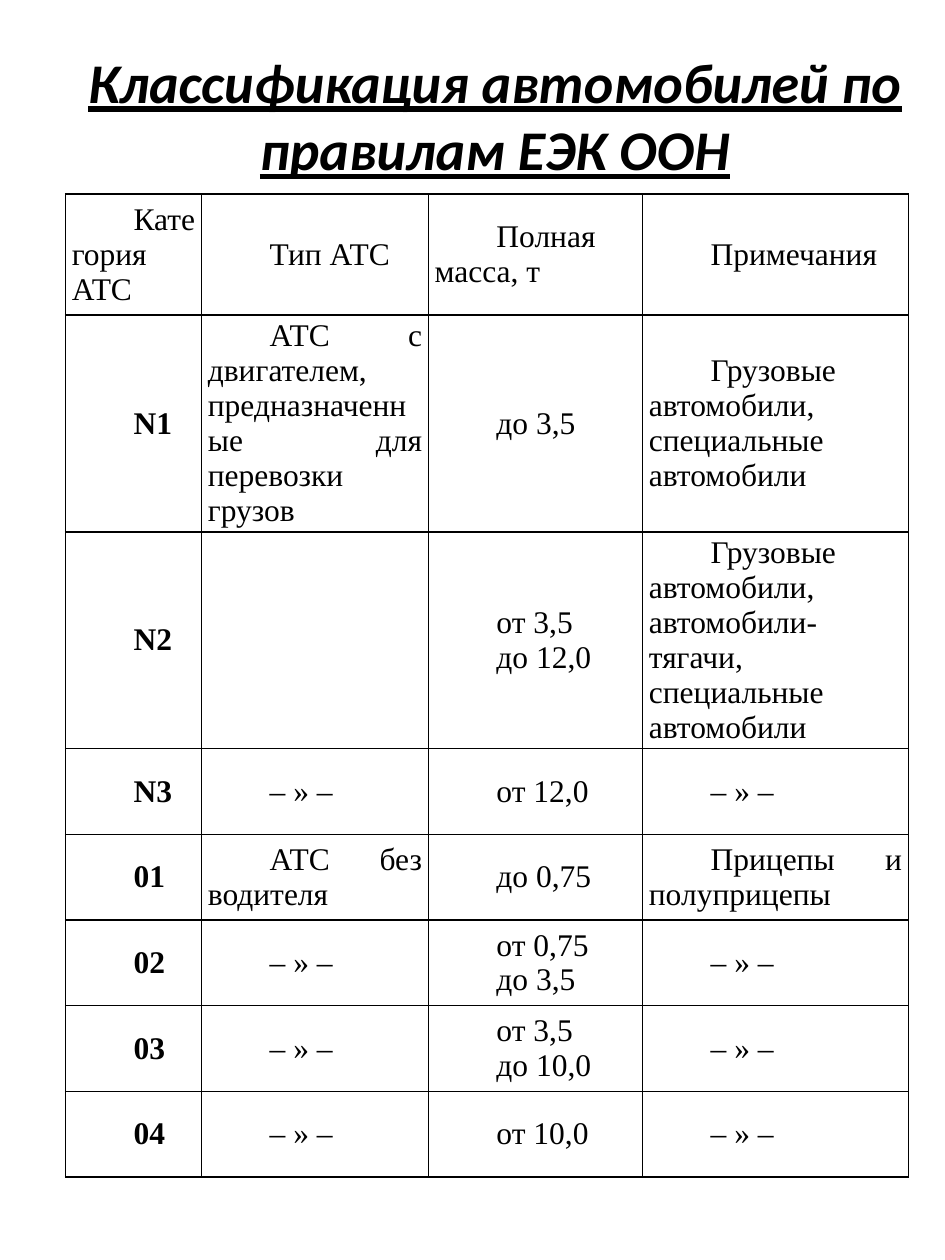
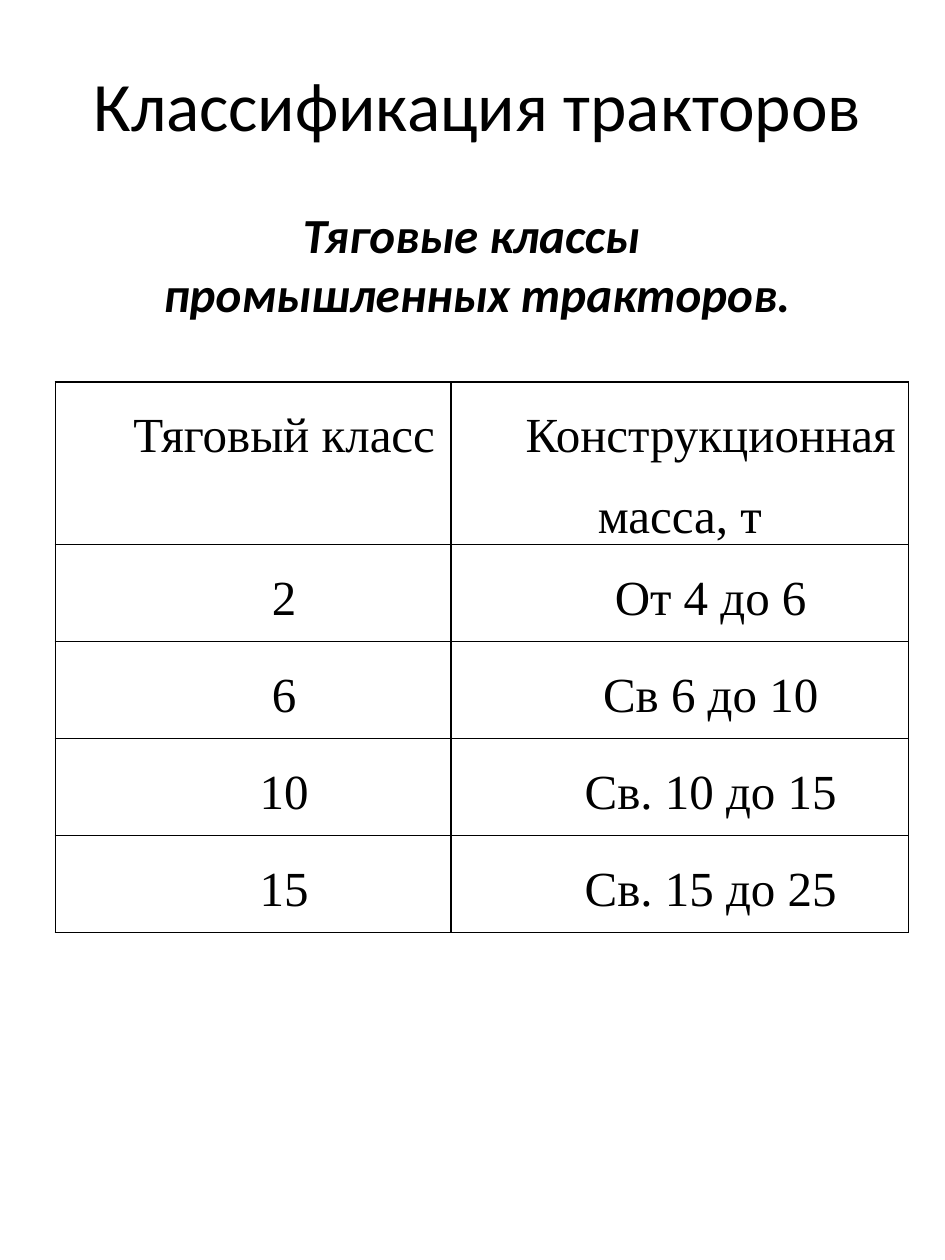
"""Build two slides that classify vehicles and tractors in tables."""
from dataclasses import dataclass

from lxml import etree
from pptx import Presentation
from pptx.dml.color import RGBColor
from pptx.enum.text import MSO_ANCHOR, MSO_AUTO_SIZE, PP_ALIGN
from pptx.oxml.ns import qn
from pptx.util import Inches, Pt

CENTER, JUSTIFY = PP_ALIGN.CENTER, PP_ALIGN.JUSTIFY
TOP, MIDDLE = MSO_ANCHOR.TOP, MSO_ANCHOR.MIDDLE
NO_AUTOFIT = MSO_AUTO_SIZE.NONE

COLORS = {"text": "000000", "border": "000000", "background": "FFFFFF"}
HEADING_FONT, TABLE_FONT = "Calibri", "Times New Roman"
TITLE_ONLY_LAYOUT = 5
FIRST_LINE_INDENT = Inches(0.49)
BORDER_WIDTH = Pt(1)
DITTO = "– » –"


@dataclass(frozen=True)
class Box:
    left: float
    top: float
    width: float
    height: float

    def lengths(self) -> tuple:
        return tuple(Inches(value) for value in (self.left, self.top, self.width, self.height))


@dataclass(frozen=True)
class Heading:
    lines: tuple
    box: Box
    size: float
    bold: bool = False
    italic: bool = False
    underline: bool = False
    margin_top: float = 0.05


@dataclass(frozen=True)
class TableSpec:
    left: float
    top: float
    columns: tuple
    row_heights: tuple
    rows: tuple
    size: int
    alignment: PP_ALIGN
    anchor: MSO_ANCHOR
    margin_x: float
    margin_y: float
    line_spacing: float = 1.0
    bold_categories: bool = False
    filled: bool = True


VEHICLE_TITLE = Heading(("Классификация автомобилей по правилам ЕЭК ООН",),
                        Box(0.36, 0.28, 7.14, 1.26), 32, bold=True, italic=True, underline=True)
VEHICLE_TABLE = TableSpec(
    left=0.52, top=1.54, columns=(1.08, 1.8, 1.7, 2.11),
    row_heights=(0.96, 1.53, 1.53) + (0.68,) * 5,
    rows=(
        ("Категория АТС", "Тип АТС", "Полная масса, т", "Примечания"),
        ("N1", "АТС с двигателем, предназначенные для перевозки грузов", "до 3,5",
         "Грузовые автомобили, специальные автомобили"),
        ("N2", "", "от 3,5 \nдо 12,0",
         "Грузовые автомобили, автомобили-тягачи, специальные автомобили"),
        ("N3", DITTO, "от 12,0", DITTO),
        ("01", "АТС без водителя", "до 0,75", "Прицепы и полуприцепы"),
        ("02", DITTO, "от 0,75 \nдо 3,5", DITTO),
        ("03", DITTO, "от 3,5 \nдо 10,0", DITTO),
        ("04", DITTO, "от 10,0", DITTO),
    ),
    size=18, alignment=JUSTIFY, anchor=MIDDLE, margin_x=0.05, margin_y=0.03,
    bold_categories=True)

TRACTOR_TITLE = Heading(("Классификация тракторов",), Box(0.6, 0.35, 6.38, 0.94), 39.6)
TRACTOR_SUBTITLE = Heading(("Тяговые классы ", "промышленных тракторов."),
                           Box(0.36, 1.46, 6.85, 1.02), 28, bold=True, italic=True,
                           margin_top=0.29)
TRACTOR_TABLE = TableSpec(
    left=0.44, top=3.03, columns=(3.14, 3.63), row_heights=(0.77,) * 5,
    rows=(
        ("Тяговый класс", "Конструкционная масса, т"),
        ("2", "От 4 до 6"),
        ("6", "Св 6 до 10"),
        ("10", "Св. 10 до 15"),
        ("15", "Св. 15 до 25"),
    ),
    size=28, alignment=CENTER, anchor=TOP, margin_x=0.07, margin_y=0,
    line_spacing=1.5, filled=False)


def set_font(paragraph, name: str, size: float, bold: bool = False) -> None:
    font = paragraph.font
    font.name, font.size, font.bold = name, Pt(size), bold
    font.color.rgb = RGBColor.from_string(COLORS["text"])


def write_heading(shape, heading: Heading) -> None:
    shape.left, shape.top, shape.width, shape.height = heading.box.lengths()
    frame = shape.text_frame
    frame.text = "\n".join(heading.lines)
    frame.word_wrap = True
    frame.auto_size = NO_AUTOFIT
    frame.vertical_anchor = MIDDLE
    frame.margin_top = Inches(heading.margin_top)
    for paragraph in frame.paragraphs:
        paragraph.alignment = CENTER
        set_font(paragraph, HEADING_FONT, heading.size, heading.bold)
        paragraph.font.italic = heading.italic
        paragraph.font.underline = heading.underline


def set_borders(cell) -> None:
    properties = cell._tc.get_or_add_tcPr()
    for position, side in enumerate(("lnL", "lnR", "lnT", "lnB")):
        line = etree.Element(qn(f"a:{side}"), w=str(BORDER_WIDTH))
        fill = etree.SubElement(line, qn("a:solidFill"))
        etree.SubElement(fill, qn("a:srgbClr"), val=COLORS["border"])
        properties.insert(position, line)


def format_cell(cell, text: str, spec: TableSpec, bold: bool) -> None:
    cell.text = text
    cell.vertical_anchor = spec.anchor
    cell.margin_left = cell.margin_right = Inches(spec.margin_x)
    cell.margin_top = cell.margin_bottom = Inches(spec.margin_y)
    if spec.filled:
        cell.fill.solid()
        cell.fill.fore_color.rgb = RGBColor.from_string(COLORS["background"])
    else:
        cell.fill.background()
    set_borders(cell)
    for paragraph in cell.text_frame.paragraphs:
        paragraph.alignment = spec.alignment
        paragraph.line_spacing = spec.line_spacing
        set_font(paragraph, TABLE_FONT, spec.size, bold)
        properties = paragraph._p.get_or_add_pPr()
        properties.set("marL", "0")
        properties.set("indent", str(FIRST_LINE_INDENT))


def draw_table(slide, spec: TableSpec) -> None:
    box = Box(spec.left, spec.top, sum(spec.columns), sum(spec.row_heights))
    table = slide.shapes.add_table(len(spec.rows), len(spec.columns), *box.lengths()).table
    table.first_row = table.horz_banding = False
    for column, width in zip(table.columns, spec.columns):
        column.width = Inches(width)
    for row_index, (row, height) in enumerate(zip(table.rows, spec.row_heights)):
        row.height = Inches(height)
        for column_index, text in enumerate(spec.rows[row_index]):
            bold = spec.bold_categories and row_index > 0 and column_index == 0
            format_cell(row.cells[column_index], text, spec, bold)


def add_titled_slide(presentation, title: Heading):
    slide = presentation.slides.add_slide(presentation.slide_layouts[TITLE_ONLY_LAYOUT])
    write_heading(slide.shapes.title, title)
    return slide


def main() -> None:
    presentation = Presentation()
    presentation.slide_width, presentation.slide_height = Inches(7.5), Inches(10)

    vehicle_slide = add_titled_slide(presentation, VEHICLE_TITLE)
    draw_table(vehicle_slide, VEHICLE_TABLE)

    tractor_slide = add_titled_slide(presentation, TRACTOR_TITLE)
    subtitle = tractor_slide.shapes.add_textbox(*TRACTOR_SUBTITLE.box.lengths())
    write_heading(subtitle, TRACTOR_SUBTITLE)
    draw_table(tractor_slide, TRACTOR_TABLE)

    presentation.save("out.pptx")


if __name__ == "__main__":
    main()
